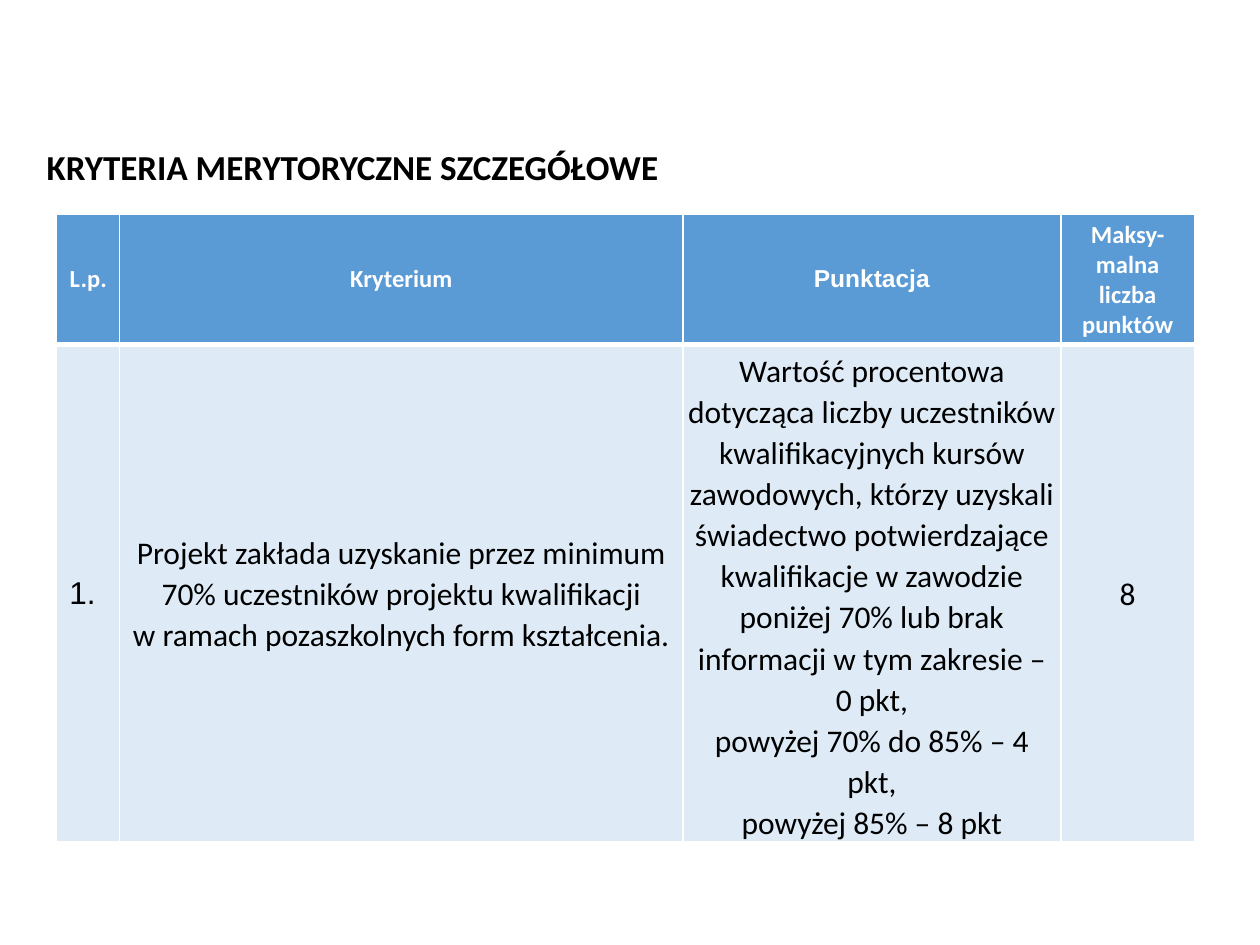
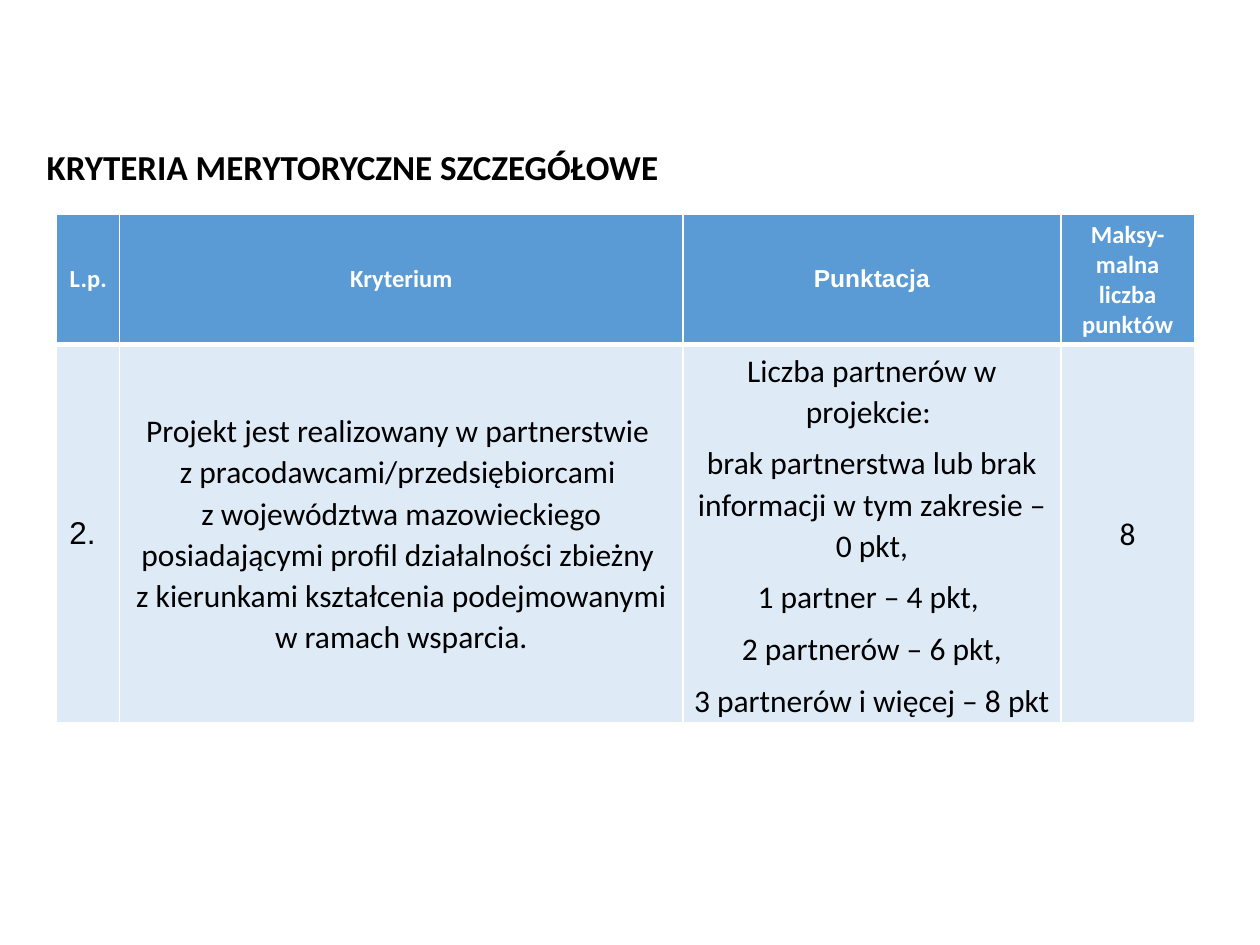
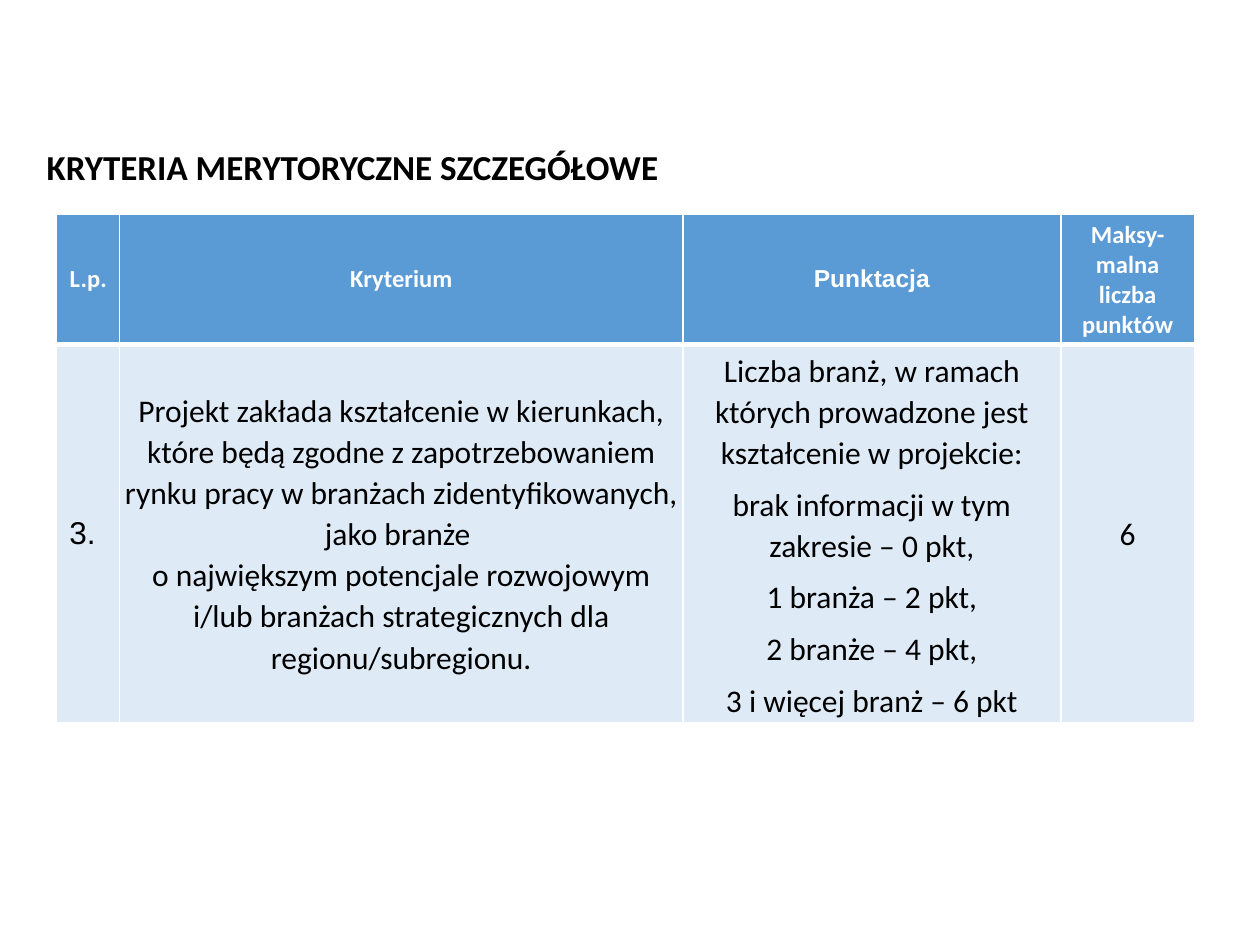
from dataclasses import dataclass

import pptx
import pptx.dml.color
import pptx.enum.text
import pptx.oxml
import pptx.oxml.ns
import pptx.slide
import pptx.table
import pptx.text.text
import pptx.util

RGB = pptx.dml.color.RGBColor
ALIGN = pptx.enum.text.PP_ALIGN
ANCHOR = pptx.enum.text.MSO_ANCHOR
Inches = pptx.util.Inches
Pt = pptx.util.Pt

BLUE = RGB(0x5B, 0x9B, 0xD5)
PALE = RGB(0xDE, 0xEB, 0xF7)
WHITE = RGB(0xFF, 0xFF, 0xFF)
BLACK = RGB(0x00, 0x00, 0x00)

WIDE, HIGH = 10, 7.5
LEFT, TOP = 0.45, 1.7
COLS = (0.5, 4.47, 3, 1.06)
HEAD_ROW = 1.01
INSET = 0.04
THIN, THICK = 1, 3

TITLE = "KRYTERIA MERYTORYCZNE SZCZEGÓŁOWE"


@dataclass(frozen=True)
class Style:
    size: int
    color: RGB
    bold: bool = False
    face: str = "Calibri"
    align: ALIGN = ALIGN.CENTER
    lead: float | None = None
    gap: int = 0


@dataclass(frozen=True)
class Rule:
    """One scoring rule: its number, criterion, point scale and best score."""
    num: str
    text: str
    scale: tuple[str, ...]
    best: str
    row: float
    gap: int = 0
    anchor: ANCHOR = ANCHOR.TOP


HEAD = Style(14, WHITE, bold=True)
HEAD_ARIAL = Style(14, WHITE, bold=True, face="Arial")
INDEX = Style(18, BLACK, face="Arial", align=ALIGN.LEFT)
BODY = Style(18, BLACK, lead=1.07)
NAME = Style(20, BLACK, bold=True, align=ALIGN.LEFT)

HEADS = (
    ("L.p.", HEAD),
    ("Kryterium", HEAD),
    ("Punktacja", HEAD_ARIAL),
    ("Maksy-malna liczba punktów", HEAD),
)

RULES = (
    Rule(
        "1.",
        "Projekt zakłada uzyskanie przez minimum 70% uczestników projektu "
        "kwalifikacji\nw ramach pozaszkolnych form kształcenia.",
        (
            "Wartość procentowa dotycząca liczby uczestników kwalifikacyjnych "
            "kursów zawodowych, którzy uzyskali świadectwo potwierdzające "
            "kwalifikacje w zawodzie",
            "poniżej 70% lub brak informacji w tym zakresie – 0 pkt,",
            "powyżej 70% do 85% – 4 pkt,",
            "powyżej 85% – 8 pkt",
        ),
        "8", row=3.95, anchor=ANCHOR.MIDDLE,
    ),
    Rule(
        "2.",
        "Projekt jest realizowany w partnerstwie \n"
        "z pracodawcami/przedsiębiorcami \n"
        "z województwa mazowieckiego posiadającymi profil działalności zbieżny \n"
        "z kierunkami kształcenia podejmowanymi w ramach wsparcia.",
        (
            "Liczba partnerów w projekcie: ",
            "brak partnerstwa lub brak informacji w tym zakresie – 0 pkt,",
            "1 partner – 4 pkt, ",
            "2 partnerów – 6 pkt,",
            "3 partnerów i więcej – 8 pkt",
        ),
        "8", row=3, gap=6,
    ),
    Rule(
        "3.",
        "Projekt zakłada kształcenie w kierunkach, które będą zgodne "
        "z zapotrzebowaniem rynku pracy w branżach zidentyfikowanych, "
        "jako branże \no największym potencjale rozwojowym i/lub branżach "
        "strategicznych dla regionu/subregionu.",
        (
            "Liczba branż, w ramach których prowadzone jest kształcenie "
            "w projekcie:",
            "brak informacji w tym zakresie – 0 pkt,",
            "1 branża – 2 pkt,",
            "2 branże – 4 pkt,",
            "3 i więcej branż – 6 pkt",
        ),
        "6", row=3, gap=6,
    ),
)


def write(frame: pptx.text.text.TextFrame, lines: tuple[str, ...],
          style: Style, gap: int = 0) -> None:
    """Fill a frame with one paragraph a line, gap points apart."""
    for i, line in enumerate(lines):
        para = frame.add_paragraph() if i else frame.paragraphs[0]
        para.text = line
        para.alignment = style.align
        if style.lead:
            para.line_spacing = style.lead
        if i and gap:
            para.space_before = Pt(gap)
        font = para.font
        font.name, font.size, font.bold = style.face, Pt(style.size), style.bold
        font.color.rgb = style.color


def edge(cell: pptx.table._Cell, top: int, base: int) -> None:
    """Draw white borders; must run before the cell is filled."""
    props = cell._tc.get_or_add_tcPr()
    space = pptx.oxml.ns.nsdecls("a")
    for side, width in zip("LRTB", (THIN, THIN, top, base)):
        props.append(pptx.oxml.parse_xml(
            f'<a:ln{side} {space} w="{Pt(width)}"><a:solidFill>'
            f'<a:srgbClr val="{WHITE}"/></a:solidFill></a:ln{side}>'))


def paint(cell: pptx.table._Cell, fill: RGB, anchor: ANCHOR) -> None:
    cell.fill.solid()
    cell.fill.fore_color.rgb = fill
    cell.vertical_anchor = anchor


def add_title(slide: pptx.slide.Slide) -> None:
    title = slide.shapes.title
    title.left, title.top = Inches(0.27), Inches(1.1)
    title.width, title.height = Inches(5.18), Inches(0.44)
    frame = title.text_frame
    frame.word_wrap = False
    frame.auto_size = pptx.enum.text.MSO_AUTO_SIZE.SHAPE_TO_FIT_TEXT
    frame.vertical_anchor = ANCHOR.MIDDLE
    write(frame, (TITLE,), NAME)


def add_grid(slide: pptx.slide.Slide, rule: Rule) -> None:
    rows = (HEAD_ROW, rule.row)
    table = slide.shapes.add_table(
        len(rows), len(COLS), Inches(LEFT), Inches(TOP),
        Inches(sum(COLS)), Inches(sum(rows))).table
    for col, width in zip(table.columns, COLS):
        col.width = Inches(width)
    for row, height in zip(table.rows, rows):
        row.height = Inches(height)

    for i, (text, style) in enumerate(HEADS):
        cell = table.cell(0, i)
        edge(cell, THIN, THICK)
        paint(cell, BLUE, ANCHOR.MIDDLE)
        write(cell.text_frame, (text,), style)

    body = (
        ((rule.num,), INDEX, ANCHOR.MIDDLE),
        ((rule.text,), BODY, ANCHOR.MIDDLE),
        (rule.scale, BODY, rule.anchor),
        ((rule.best,), BODY, ANCHOR.MIDDLE),
    )
    for i, (lines, style, anchor) in enumerate(body):
        cell = table.cell(1, i)
        edge(cell, THICK, THIN)
        paint(cell, PALE, anchor)
        if style is BODY:
            cell.margin_left = cell.margin_right = Inches(INSET)
            cell.margin_top = cell.margin_bottom = Inches(INSET)
        write(cell.text_frame, lines, style, rule.gap)


def main() -> None:
    deck = pptx.Presentation()
    deck.slide_width, deck.slide_height = Inches(WIDE), Inches(HIGH)
    plain = deck.slide_layouts.get_by_name("Title Only")
    for rule in RULES:
        slide = deck.slides.add_slide(plain)
        add_grid(slide, rule)
        add_title(slide)
    deck.save("out.pptx")


if __name__ == "__main__":
    main()
